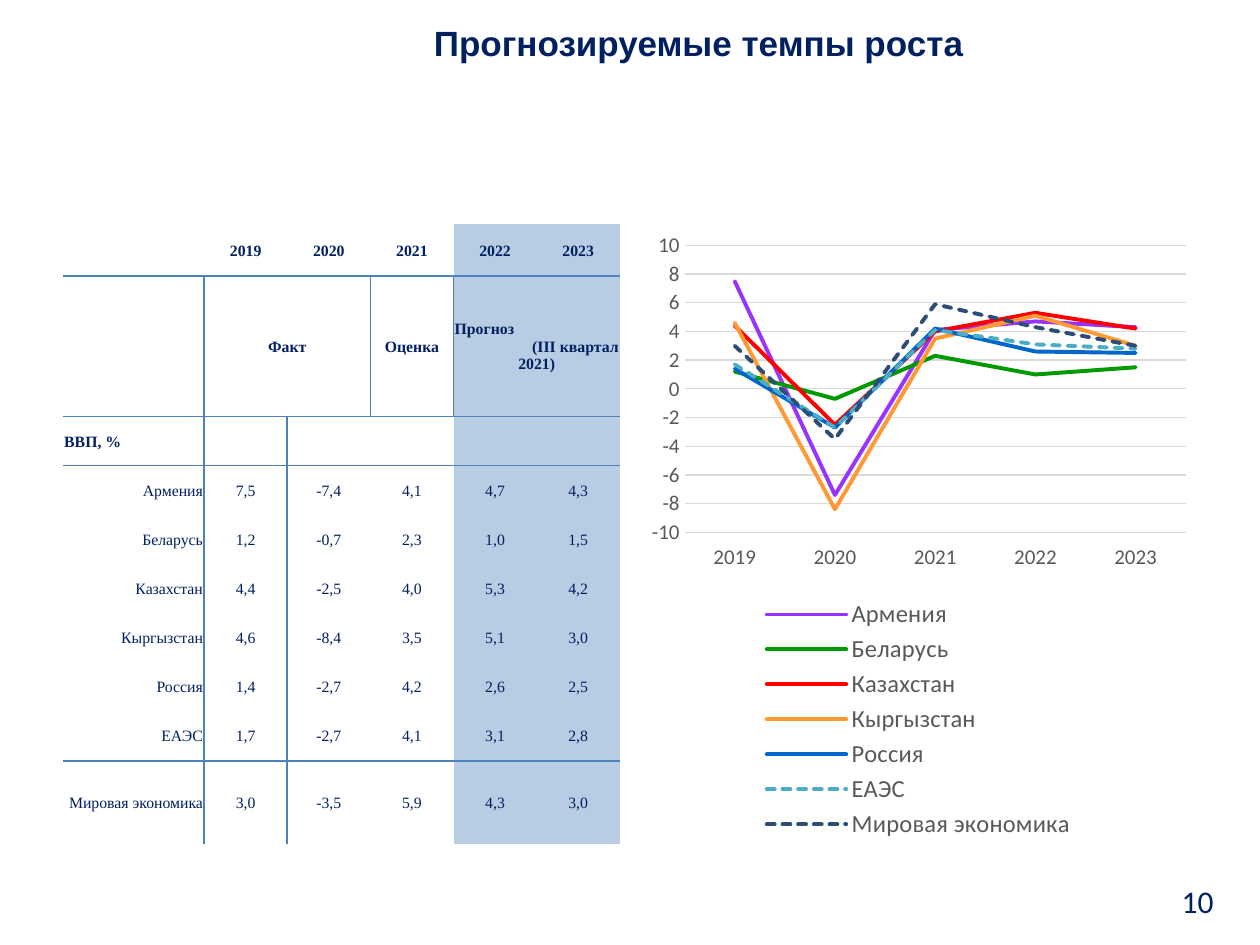
"""Builds the growth forecast slide: a table beside a line chart."""
from collections import namedtuple
from dataclasses import dataclass

from lxml import etree
from pptx import Presentation, util as u
from pptx.chart import data as cd
from pptx.dml import color as col
from pptx.enum import chart as ch, dml, text as tx
from pptx.oxml import ns, parse_xml

Box = namedtuple("Box", "left top width height")
AL, MID = tx.PP_ALIGN, tx.MSO_ANCHOR.MIDDLE


@dataclass(frozen=True)
class Theme:
    """Colours, fonts and type sizes of the slide."""
    ink: str = "002060"
    rule: str = "4F81BD"
    pale: str = "FFFFFF"
    tint: str = "B8CCE4"
    grey: str = "595959"
    grid: str = "D9D9D9"
    head: str = "Arial"
    body: str = "Calibri"
    cell: str = "Times New Roman"
    title: int = 20
    page: int = 18
    key: int = 14
    axis: int = 12
    small: int = 9


T = Theme()
YEARS = ["2019", "2020", "2021", "2022", "2023"]
ROWS = [
    ("Армения", "9933FF", False, (7.5, -7.4, 4.1, 4.7, 4.3)),
    ("Беларусь", "009900", False, (1.2, -0.7, 2.3, 1.0, 1.5)),
    ("Казахстан", "FF0000", False, (4.4, -2.5, 4.0, 5.3, 4.2)),
    ("Кыргызстан", "FF9933", False, (4.6, -8.4, 3.5, 5.1, 3.0)),
    ("Россия", "0066CC", False, (1.4, -2.7, 4.2, 2.6, 2.5)),
    ("ЕАЭС", "4BACC6", True, (1.7, -2.7, 4.1, 3.1, 2.8)),
    ("Мировая экономика", "2C4D75", True, (3.0, -3.5, 5.9, 4.3, 3.0)),
]


def area(deck, left, top, width, height):
    """Return a box from units of a grid of 100 columns and 75 rows."""
    dx, dy = deck.slide_width / 100, deck.slide_height / 75
    return Box(int(left * dx), int(top * dy), int(width * dx), int(height * dy))


def put(obj, **vals):
    """Set each named attribute on an object."""
    for key, val in vals.items():
        setattr(obj, key, val)


def ink(font, name, size, tone, bold=False):
    """Format a font."""
    put(font, name=name, size=u.Pt(size), bold=bold)
    font.color.rgb = col.RGBColor.from_string(tone)


def stroke(line, tone, width):
    """Give a line its colour and width."""
    line.color.rgb = col.RGBColor.from_string(tone)
    line.width = u.Pt(width)


def write(frame, parts, face, size, bold=False):
    """Write aligned paragraphs into a text frame."""
    put(frame, word_wrap=True)
    for num, (words, align) in enumerate(parts):
        para = frame.add_paragraph() if num else frame.paragraphs[0]
        para.alignment = align
        run = para.add_run()
        run.text = words
        ink(run.font, face, size, T.ink, bold)


def heading(slide, box):
    """Place the slide title."""
    shape = slide.shapes.title
    put(shape, **box._asdict())
    shape.text_frame.vertical_anchor = MID
    write(shape.text_frame, [("Прогнозируемые темпы роста", AL.CENTER)],
          T.head, T.title, True)


def folio(slide, box):
    """Place the page number."""
    frame = slide.shapes.add_textbox(*box).text_frame
    frame.vertical_anchor = MID
    write(frame, [("10", AL.RIGHT)], T.body, T.page)


def edges(row, place):
    """Return the ruled sides of a cell with their widths."""
    below = {0: 1.5, 1: 1, 8: 1}
    def right(at):
        return row > 0 and at == 0 or row == 1 and at == 2
    sides = {"L": right(place - 1), "R": right(place),
             "T": below.get(row - 1), "B": below.get(row)}
    return {side: float(wide) for side, wide in sides.items() if wide}


def border(cell, sides):
    """Draw the given sides of a cell."""
    props = cell._tc.get_or_add_tcPr()
    for num, (side, wide) in enumerate(sides.items()):
        props.insert(num, parse_xml(
            f'<a:ln{side} {ns.nsdecls("a")} w="{u.Pt(wide)}"><a:solidFill>'
            f'<a:srgbClr val="{T.rule}"/></a:solidFill></a:ln{side}>'))


def content():
    """Return the text, alignment and weight of each filled cell."""
    cells = {(0, n): ([(year, AL.CENTER)], True)
             for n, year in enumerate(YEARS, 1)}
    cells[1, 1] = [("Факт", AL.CENTER)], True
    cells[1, 3] = [("Оценка", AL.CENTER)], True
    cells[1, 4] = [("Прогноз", AL.LEFT), ("(III квартал", AL.RIGHT),
                   ("2021)", AL.CENTER)], True
    cells[2, 0] = [("ВВП, %", AL.LEFT)], True
    for row, (name, _, _, vals) in enumerate(ROWS, 3):
        cells[row, 0] = [(name, AL.RIGHT)], False
        for place, val in enumerate(vals, 1):
            words = f"{val:.1f}".replace(".", ",")
            cells[row, place] = [(words, AL.CENTER)], False
    return cells


def figures(slide, box):
    """Place the table of growth rates."""
    wide = [1.12] + [0.66] * 5
    high = [0.41, 1.12] + [0.39] * 6 + [0.4, 0.66]
    table = slide.shapes.add_table(len(high), len(wide), *box).table
    put(table, first_row=False, horz_banding=False)
    style = table._tbl.tblPr.find(ns.qn("a:tableStyleId"))
    style.text = "{2D5ABB26-0587-4C30-8999-92F81FD0307C}"
    for part, size in zip(table.columns, wide):
        part.width = int(box.width * size / sum(wide))
    for part, size in zip(table.rows, high):
        part.height = int(box.height * size / sum(high))
    for first in (1, 4):
        table.cell(1, first).merge(table.cell(1, first + 1))
    cells, inset = content(), u.Inches(0.01)
    for row in range(len(high)):
        for place in range(len(wide)):
            cell = table.cell(row, place)
            put(cell, vertical_anchor=MID, margin_left=inset,
                margin_right=inset, margin_top=inset, margin_bottom=0)
            cell.fill.solid()
            cell.fill.fore_color.rgb = col.RGBColor.from_string(
                T.tint if place > 3 else T.pale)
            border(cell, edges(row, place))
            if (row, place) in cells:
                parts, bold = cells[row, place]
                write(cell.text_frame, parts, T.cell, T.small, bold)


def layout(node, after, inner, **shares):
    """Fix the place of a chart part as shares of the chart."""
    for old in node.findall(ns.qn("c:layout")):
        node.remove(old)
    root = etree.Element(ns.qn("c:layout"))
    spot = etree.SubElement(root, ns.qn("c:manualLayout"))
    vals = {"layoutTarget": "inner"} if inner else {}
    vals.update(xMode="edge", yMode="edge", **shares)
    for key, val in vals.items():
        etree.SubElement(spot, ns.qn(f"c:{key}")).set("val", str(val))
    node.insert(after, root)


def trend(slide, box):
    """Place the line chart of growth rates."""
    data = cd.CategoryChartData()
    data.categories = YEARS
    for name, _, _, vals in ROWS:
        data.add_series(name, vals)
    chart = slide.shapes.add_chart(ch.XL_CHART_TYPE.LINE, *box, data).chart
    put(chart, has_title=False, has_legend=True)
    ink(chart.font, T.body, 10, "000000")
    for plot, (_, tone, dash, _) in zip(chart.plots[0].series, ROWS):
        plot.smooth = False
        plot.marker.style = ch.XL_MARKER_STYLE.NONE
        stroke(plot.format.line, tone, 2.25)
        if dash:
            plot.format.line.dash_style = dml.MSO_LINE.SQUARE_DOT
        plot._element.find(".//" + ns.qn("a:ln")).set("cap", "rnd")
    cats, rates = chart.category_axis, chart.value_axis
    for axis in (cats, rates):
        put(axis, major_tick_mark=ch.XL_TICK_MARK.NONE,
            minor_tick_mark=ch.XL_TICK_MARK.NONE)
        ink(axis.tick_labels.font, T.body, T.axis, T.grey)
    cats.tick_label_position = ch.XL_TICK_LABEL_POSITION.LOW
    stroke(cats.format.line, T.grid, 0.75)
    put(rates, minimum_scale=-10, maximum_scale=10, major_unit=2)
    rates.format.line.fill.background()
    stroke(rates.major_gridlines.format.line, T.grid, 0.75)
    put(chart.legend, position=ch.XL_LEGEND_POSITION.BOTTOM,
        include_in_layout=False)
    ink(chart.legend.font, T.body, T.key, T.grey)
    area_node = chart._chartSpace.chart.plotArea
    layout(area_node, 0, True, x=0.08, y=0.04, w=0.9, h=0.46)
    layout(chart.legend._element, 1, False, x=0.22, y=0.6, w=0.56, h=0.4)


def main():
    """Build and save the deck."""
    deck = Presentation()
    put(deck, slide_width=u.Inches(10), slide_height=u.Inches(7.5))
    slide = deck.slides.add_slide(deck.slide_layouts[5])
    heading(slide, area(deck, 22.4, 0.8, 66.1, 5.2))
    folio(slide, area(deck, 71.7, 69.5, 25.6, 4))
    figures(slide, area(deck, 5, 17.8, 44.2, 49.2))
    trend(slide, area(deck, 50.8, 17.5, 44.2, 49.5))
    deck.save("out.pptx")


if __name__ == "__main__":
    main()
